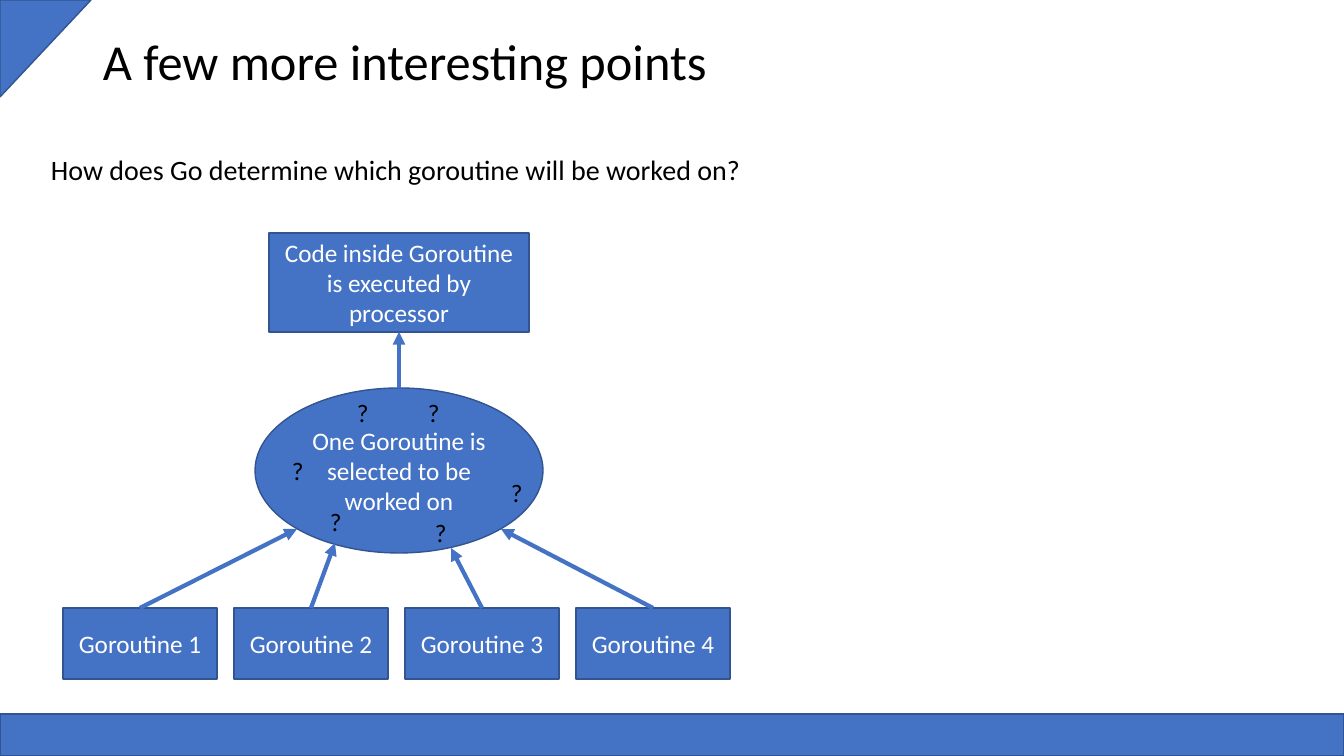
from lxml import etree
from pptx import Presentation
from pptx.dml.color import RGBColor
from pptx.enum.shapes import MSO_CONNECTOR, MSO_SHAPE
from pptx.enum.text import MSO_ANCHOR, PP_ALIGN
from pptx.oxml.ns import qn
from pptx.util import Pt

RECT, OVAL, TRIANGLE = MSO_SHAPE.RECTANGLE, MSO_SHAPE.OVAL, MSO_SHAPE.RIGHT_TRIANGLE
STRAIGHT = MSO_CONNECTOR.STRAIGHT
CENTER, MIDDLE = PP_ALIGN.CENTER, MSO_ANCHOR.MIDDLE
TOP, BOTTOM = 0, 2

BLUE = RGBColor(0x44, 0x72, 0xC4)
OUTLINE = RGBColor(0x32, 0x54, 0x91)
BLACK = RGBColor(0, 0, 0)
WHITE = RGBColor(0xFF, 0xFF, 0xFF)
FONT = "Calibri"

# Content, with places in px as (left, top, width, height)
SLIDE_W, SLIDE_H = 1344, 756
FOOTER = (0, 714, 1344, 42)
CORNER = (-3, 3, 97, 91)
TITLE = ("A few more interesting points", (93, 25, 630, 72), 36)
QUESTION = ("How does Go determine which goroutine will be worked on?",
            (41, 148, 716, 142), 20)
EXECUTED = ("Code inside Goroutine is executed by processor", (269, 233, 260, 99))
SELECTED = ("One Goroutine is selected to be worked on", (255, 388, 288, 165))
# Each goroutine with the point where its arrow meets the ellipse
GOROUTINES = [("Goroutine 1", (297, 529)), ("Goroutine 2", (335, 543)),
              ("Goroutine 3", (451, 548)), ("Goroutine 4", (501, 529))]
ROW_LEFT, ROW_TOP, BOX_W, BOX_H, BOX_PITCH = 63, 608, 154, 71, 171
MARKS = [(501, 472), (282, 450), (347, 392), (418, 392), (425, 512), (320, 501)]
MARK_W, MARK_H = 32, 40


def px(n):
    return round(n * 914400 / 100.8)


def write(sp, text, size, color):
    p = sp.text_frame.paragraphs[0]
    p.text = text
    font = p.runs[0].font
    font.name, font.size = FONT, Pt(size)
    font.color.rgb = color
    return p


def add_label(slide, text, box, size):
    tb = slide.shapes.add_textbox(*map(px, box))
    tb.text_frame.word_wrap = False
    write(tb, text, size, BLACK)


def add_block(slide, kind, box, text=None):
    sp = slide.shapes.add_shape(kind, *map(px, box))
    sp.shadow.inherit = False
    sp.fill.solid()
    sp.fill.fore_color.rgb = BLUE
    sp.line.color.rgb = OUTLINE
    sp.line.width = Pt(1)
    if text:
        sp.text_frame.word_wrap = True
        sp.text_frame.vertical_anchor = MIDDLE
        write(sp, text, 18, WHITE).alignment = CENTER
    return sp


def add_arrow(slide, source, end=(0, 0)):
    """Draw an arrow from the top of source to end."""
    line = slide.shapes.add_connector(STRAIGHT, 0, 0, *map(px, end))
    line.begin_connect(source, TOP)
    line.line.color.rgb = BLUE
    line.line.width = Pt(3)
    etree.SubElement(line.line._get_or_add_ln(), qn("a:tailEnd"), type="triangle")
    etree.SubElement(line._element.spPr, qn("a:effectLst"))
    return line


def main():
    prs = Presentation()
    prs.slide_width, prs.slide_height = px(SLIDE_W), px(SLIDE_H)
    slide = prs.slides.add_slide(prs.slide_layouts[6])

    add_block(slide, RECT, FOOTER)
    add_block(slide, TRIANGLE, CORNER).rotation = 90
    for label in (TITLE, QUESTION):
        add_label(slide, *label)

    executed = add_block(slide, RECT, EXECUTED[1], EXECUTED[0])
    selected = add_block(slide, OVAL, SELECTED[1], SELECTED[0])
    add_arrow(slide, selected).end_connect(executed, BOTTOM)

    for i, (name, target) in enumerate(GOROUTINES):
        box = (ROW_LEFT + i * BOX_PITCH, ROW_TOP, BOX_W, BOX_H)
        add_arrow(slide, add_block(slide, RECT, box, name), target)

    for left, top in MARKS:
        add_label(slide, "?", (left, top, MARK_W, MARK_H), 18)

    prs.save("out.pptx")


if __name__ == "__main__":
    main()
